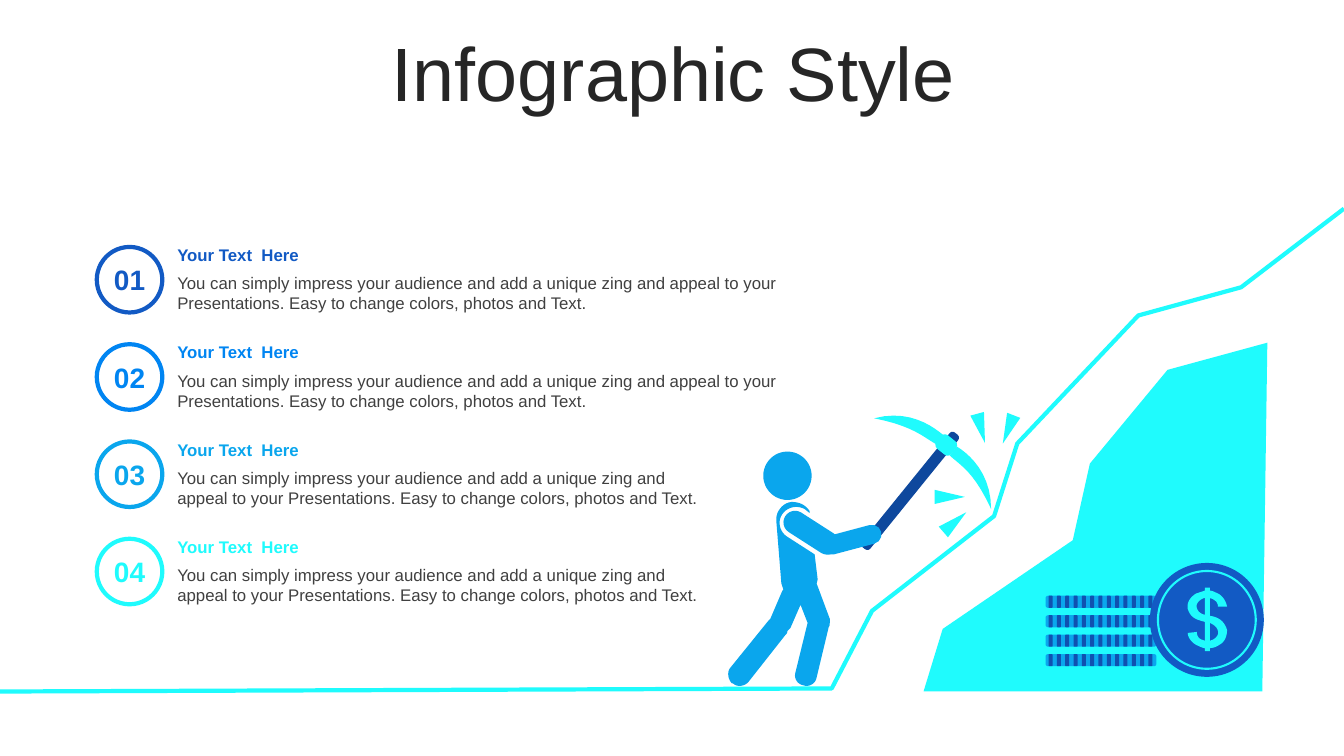
from pptx import Presentation
from pptx.dml.color import RGBColor
from pptx.enum.shapes import MSO_SHAPE as SHAPE
from pptx.enum.text import MSO_ANCHOR as ANCHOR, PP_ALIGN as ALIGN
from pptx.util import Inches, Pt

NAVY = RGBColor(0x12, 0x5A, 0xC4)
BLUE = RGBColor(0x00, 0x85, 0xF2)
SKY = RGBColor(0x0A, 0xA6, 0xED)
CYAN = RGBColor(0x1F, 0xFB, 0xFD)
HANDLE = RGBColor(0x0E, 0x48, 0x9D)
STRIPE = RGBColor(0x10, 0x51, 0xB0)
DARK = RGBColor(0x26, 0x26, 0x26)
GREY = RGBColor(0x40, 0x40, 0x40)

TITLE = "Infographic Style"
HEADING = "Your Text  Here"
BODY = ("You can simply impress your audience and add a unique zing and appeal "
        "to your Presentations. Easy to change colors, photos and Text.")
# number, colour, text width
ITEMS = [("01", NAVY, 6.22), ("02", BLUE, 6.22), ("03", SKY, 5.41), ("04", CYAN, 5.41)]
ITEM_PITCH = 0.965

# Outlines: a pair is a corner, six numbers are a curve (two controls, end)
GROUND = [(0, 6.86), (8.25, 6.83), (8.65, 6.06), (9.86, 5.12), (10.09, 4.4),
          (11.29, 3.13), (12.31, 2.85), (13.33, 2.07)]
ROCK = [(12.57, 3.4), (11.58, 3.67), (10.81, 4.6), (10.64, 5.36), (9.35, 6.24),
        (9.16, 6.86), (12.52, 6.86)]
PICK_BLADES = [
    [(9.49, 4.43), (9.62, 4.51, 9.83, 4.7, 9.83, 5.05),
     (9.66, 4.68, 9.53, 4.62, 9.42, 4.52)],
    [(9.36, 4.32), (9.24, 4.22, 9.01, 4.06, 8.67, 4.15),
     (9.07, 4.23, 9.16, 4.34, 9.29, 4.41)],
]
MINER_BODY = [
    (7.85, 4.98), (7.93, 4.98, 7.99, 5.01, 8.03, 5.07), (8.03, 5.09), (7.98, 5.05),
    (7.9, 5.01, 7.81, 5.03, 7.76, 5.1), (7.71, 5.17, 7.73, 5.27, 7.8, 5.32),
    (8.08, 5.5), (8.11, 5.75), (8.1, 5.79), (8.23, 6.14),
    (8.23, 6.15, 8.23, 6.17, 8.23, 6.18), (8.23, 6.19, 8.23, 6.21, 8.22, 6.22),
    (8.1, 6.72), (8.09, 6.78, 8.03, 6.82, 7.97, 6.8),
    (7.91, 6.79, 7.87, 6.73, 7.89, 6.67), (8.01, 6.18), (7.94, 6), (7.84, 6.23),
    (7.81, 6.26), (7.81, 6.28, 7.8, 6.29, 7.79, 6.3), (7.42, 6.77),
    (7.38, 6.81, 7.31, 6.82, 7.27, 6.78), (7.26, 6.78),
    (7.22, 6.74, 7.21, 6.67, 7.24, 6.63), (7.62, 6.16), (7.64, 6.14), (7.76, 5.86),
    (7.77, 5.85), (7.75, 5.79), (7.7, 5.17), (7.69, 5.08, 7.76, 4.99, 7.85, 4.98)]
DOLLAR = [
    [(11.95, 5.83), (11.95, 5.86), (11.92, 5.87, 11.89, 5.88, 11.86, 5.89),
     (11.8, 5.93, 11.77, 5.98, 11.78, 6.04), (11.81, 6.14, 11.88, 6.15, 11.95, 6.17),
     (11.95, 6.36), (11.94, 6.35, 11.93, 6.35, 11.93, 6.35),
     (11.89, 6.34, 11.87, 6.31, 11.87, 6.27), (11.78, 6.28),
     (11.78, 6.33, 11.83, 6.39, 11.89, 6.41), (11.91, 6.42, 11.93, 6.43, 11.95, 6.43),
     (11.95, 6.46), (12, 6.46), (12, 6.43), (12.03, 6.43, 12.06, 6.42, 12.09, 6.4),
     (12.15, 6.37, 12.17, 6.31, 12.17, 6.25), (12.14, 6.15, 12.07, 6.12, 12, 6.11),
     (12, 5.93), (12.01, 5.94, 12.01, 5.94, 12.02, 5.94),
     (12.06, 5.96, 12.08, 5.98, 12.08, 6.02), (12.17, 6.02),
     (12.16, 5.96, 12.12, 5.9, 12.06, 5.88), (12.04, 5.87, 12.02, 5.86, 12, 5.86),
     (12, 5.83)],
    [(12, 6.18), (12.04, 6.2, 12.07, 6.22, 12.08, 6.26),
     (12.09, 6.29, 12.07, 6.32, 12.04, 6.34), (12.03, 6.35, 12.01, 6.35, 12, 6.36)],
    [(11.95, 5.93), (11.95, 6.1), (11.91, 6.09, 11.88, 6.07, 11.87, 6.03),
     (11.86, 6, 11.88, 5.97, 11.91, 5.95), (11.92, 5.94, 11.93, 5.94, 11.95, 5.93)],
]
# left, top, width, height, rotation, corner
PICK_HANDLE = (8.97, 4.14, 0.11, 1.46, 39, 0.34)
PICK_SOCKET = (9.29, 4.33, 0.19, 0.17, 39, 0.28)
MINER_ARMS = [(7.93, 4.98, 0.23, 0.61, 302.7, 0.5), (8.35, 5.05, 0.19, 0.61, 255.1, 0.5)]
# left, top, rotation
SPARKS = [(9.4, 5.03, 49.3), (9.35, 4.78, 90), (9.66, 4.1, 165), (9.93, 4.11, 201.1)]
COIN_CENTRE = (11.97, 6.15)
STACK_COINS, COIN_STRIPES = 4, 13

prs = Presentation()
prs.slide_width, prs.slide_height = Inches(13.33), Inches(7.5)
s = prs.slides.add_slide(prs.slide_layouts[5])


def paint(sp, fill=None, line=None, weight=3):
    sp.shadow.inherit = False
    if fill is None:
        sp.fill.background()
    else:
        sp.fill.solid()
        sp.fill.fore_color.rgb = fill
    if line is None:
        sp.line.fill.background()
    else:
        sp.line.color.rgb = line
        sp.line.width = Pt(weight)


def add_shape(kind, x, y, w, h, rotation=0, corner=None, **style):
    sp = s.shapes.add_shape(kind, Inches(x), Inches(y), Inches(w), Inches(h))
    sp.rotation = rotation
    if corner is not None:
        sp.adjustments[0] = corner
    paint(sp, **style)


def add_circle(cx, cy, radius, **style):
    add_shape(SHAPE.OVAL, cx - radius, cy - radius, 2 * radius, 2 * radius, **style)


def flatten(outline, steps=10):
    """Turn corners and cubic curves into a list of EMU points."""
    points = []
    for part in outline:
        if len(part) == 2:
            points.append(part)
            continue
        controls = [points[-1], part[:2], part[2:4], part[4:]]
        for i in range(1, steps + 1):
            t = i / steps
            weights = ((1 - t) ** 3, 3 * t * (1 - t) ** 2, 3 * t * t * (1 - t), t ** 3)
            points.append(tuple(sum(k * c[axis] for k, c in zip(weights, controls))
                                for axis in (0, 1)))
    return [(Inches(x), Inches(y)) for x, y in points]


def add_outline(*outlines, close=True, **style):
    first, *others = [flatten(outline) for outline in outlines]
    builder = s.shapes.build_freeform(*first[0])
    builder.add_line_segments(first[1:], close=close)
    for points in others:
        builder.move_to(*points[0])
        builder.add_line_segments(points[1:], close=close)
    paint(builder.convert_to_shape(), **style)


def write(sp, text, align=ALIGN.LEFT, **font):
    tf = sp.text_frame
    tf.word_wrap = True
    p = tf.paragraphs[0]
    p.alignment = align
    r = p.add_run()
    r.text = text
    r.font.name = "Arial"
    r.font.color.rgb = font.pop("color")
    for name, value in font.items():
        setattr(r.font, name, value)
    return p


def add_text(x, y, w, h, text, **style):
    sp = s.shapes.add_textbox(Inches(x), Inches(y), Inches(w), Inches(h))
    write(sp, text, **style)


title = s.shapes.title
title.left, title.top, title.width, title.height = map(Inches, (0.35, 0.37, 12.66, 0.79))
title.text_frame.vertical_anchor = ANCHOR.MIDDLE
write(title, TITLE, ALIGN.CENTER, size=Pt(54), color=DARK).line_spacing = 0.9

for i, (number, color, width) in enumerate(ITEMS):
    dy = i * ITEM_PITCH
    add_shape(SHAPE.OVAL, 0.96, 2.45 + dy, 0.65, 0.65, line=color)
    add_text(1.03, 2.56 + dy, 0.51, 0.44, number, align=ALIGN.CENTER,
             size=Pt(20), bold=True, color=color)
    add_text(1.66, 2.38 + dy, width, 0.3, HEADING, size=Pt(12), bold=True, color=color)
    add_text(1.66, 2.66 + dy, width, 0.5, BODY, size=Pt(12), color=GREY)

add_outline(GROUND, close=False, line=CYAN)
add_outline(ROCK, fill=CYAN)

add_shape(SHAPE.ROUNDED_RECTANGLE, *PICK_HANDLE, fill=HANDLE)
add_shape(SHAPE.ROUNDED_RECTANGLE, *PICK_SOCKET, fill=CYAN)
for blade in PICK_BLADES:
    add_outline(blade, fill=CYAN)

add_outline(MINER_BODY, fill=SKY)
add_circle(7.81, 4.72, 0.24, fill=SKY)
for arm in MINER_ARMS:
    add_shape(SHAPE.ROUNDED_RECTANGLE, *arm, fill=SKY)

for row in range(STACK_COINS):
    y = 5.91 + row * 0.193
    add_shape(SHAPE.ROUNDED_RECTANGLE, 10.37, y, 1.1, 0.12, corner=0.2, fill=SKY)
    for col in range(COIN_STRIPES):
        add_shape(SHAPE.ROUNDED_RECTANGLE, 10.4 + col * 0.0825, y, 0.04, 0.12,
                  corner=0.2, fill=STRIPE)

for x, y, rotation in SPARKS:
    add_shape(SHAPE.ISOSCELES_TRIANGLE, x, y, 0.14, 0.3, rotation, fill=CYAN)

add_circle(*COIN_CENTRE, 0.565, fill=NAVY)
add_circle(*COIN_CENTRE, 0.485, line=CYAN, weight=1.5)
add_outline(*DOLLAR, fill=CYAN)

prs.save("out.pptx")
